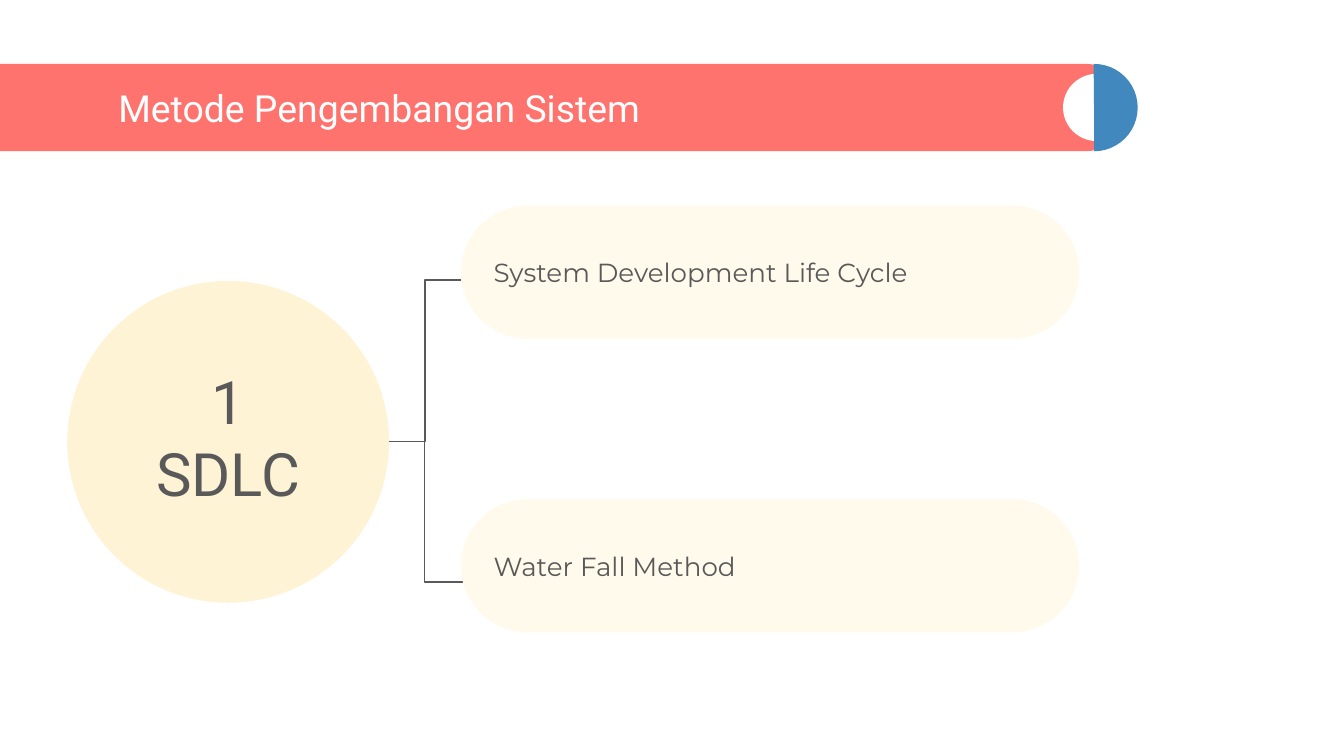
from lxml.etree import SubElement
from pptx import Presentation
from pptx.dml.color import RGBColor
from pptx.enum.shapes import MSO_CONNECTOR, MSO_SHAPE
from pptx.enum.text import MSO_ANCHOR, MSO_AUTO_SIZE, PP_ALIGN
from pptx.oxml.ns import qn
from pptx.util import Pt

PX = 4572  # 200 px to the inch
COLORS = {
    "coral": "FF736E",
    "blue": "4088BE",
    "white": "FFFFFF",
    "amber": "FBBE18",
    "cream": "FFFAEB",
    "gray": "595959",
}


def add_plain_shape(kind, bounds, color):
    """Add a filled shape without line or shadow; bounds are in px."""
    shape = slide.shapes.add_shape(kind, *[n * PX for n in bounds])
    shape.shadow.inherit = False
    shape.fill.solid()
    shape.fill.fore_color.rgb = RGBColor.from_string(COLORS[color])
    shape.line.fill.background()
    return shape


def write_text(shape, text, font, size, color, align=PP_ALIGN.LEFT, anchor=MSO_ANCHOR.MIDDLE):
    frame = shape.text_frame
    frame.text = text
    frame.word_wrap = True
    frame.auto_size = MSO_AUTO_SIZE.NONE
    frame.vertical_anchor = anchor
    frame.margin_left = frame.margin_right = 20 * PX
    frame.margin_top = frame.margin_bottom = 20 * PX
    for para in frame.paragraphs:
        para.alignment = align
        for span in para.runs:
            span.font.name = font
            span.font.size = Pt(size)
            span.font.color.rgb = RGBColor.from_string(COLORS[color])


deck = Presentation()
deck.slide_width, deck.slide_height = 2000 * PX, 1125 * PX
slide = deck.slides.add_slide(deck.slide_layouts[5])

# Banner with the two-tone disc at its right end
banner = add_plain_shape(MSO_SHAPE.ROUNDED_RECTANGLE, (-64, 95, 1744, 130), "coral")
banner.adjustments[0] = 0.5
add_plain_shape(MSO_SHAPE.OVAL, (1582, 110, 100, 100), "white")
half_disc = add_plain_shape(MSO_SHAPE.PIE, (1563, 95, 130, 130), "blue")
half_disc.rotation = 180
half_disc.adjustments[0] = 53.67
half_disc.adjustments[1] = 162

title = slide.shapes.title
title.left, title.top, title.width, title.height = [n * PX for n in (156, 119, 1394, 82)]
write_text(title, "Metode Pengembangan Sistem", "Roboto", 20, "white")
banner.element.getparent().append(title.element)  # bring in front of the banner

# Circle naming the method
circle = add_plain_shape(MSO_SHAPE.OVAL, (100, 418, 479, 479), "amber")
circle_color = circle.element.spPr.find(qn("a:solidFill")).find(qn("a:srgbClr"))
SubElement(circle_color, qn("a:alpha"), val="18000")
label = slide.shapes.add_textbox(*[n * PX for n in (100, 523, 479, 156)])
write_text(label, "1\nSDLC", "Roboto", 32, "gray", PP_ALIGN.CENTER, MSO_ANCHOR.TOP)

# Branches from the circle: end x, end y, bend position
for end_x, end_y, bend in [(686, 417, 50000), (695, 866, 45500)]:
    branch = slide.shapes.add_connector(
        MSO_CONNECTOR.ELBOW, 579 * PX, 657 * PX, end_x * PX, end_y * PX
    )
    branch.line.width = Pt(0.75)
    branch.line.color.rgb = RGBColor.from_string(COLORS["gray"])
    properties = branch.element.spPr
    SubElement(properties, qn("a:effectLst"))
    guides = properties.find(qn("a:prstGeom")).find(qn("a:avLst"))
    SubElement(guides, qn("a:gd"), name="adj1", fmla=f"val {bend}")

for top, text in [(306, "System Development Life Cycle"), (743, "Water Fall Method")]:
    box = add_plain_shape(MSO_SHAPE.ROUNDED_RECTANGLE, (686, top, 920, 198), "cream")
    box.adjustments[0] = 0.5
    write_text(box, text, "Montserrat", 14, "gray")

deck.save("out.pptx")
